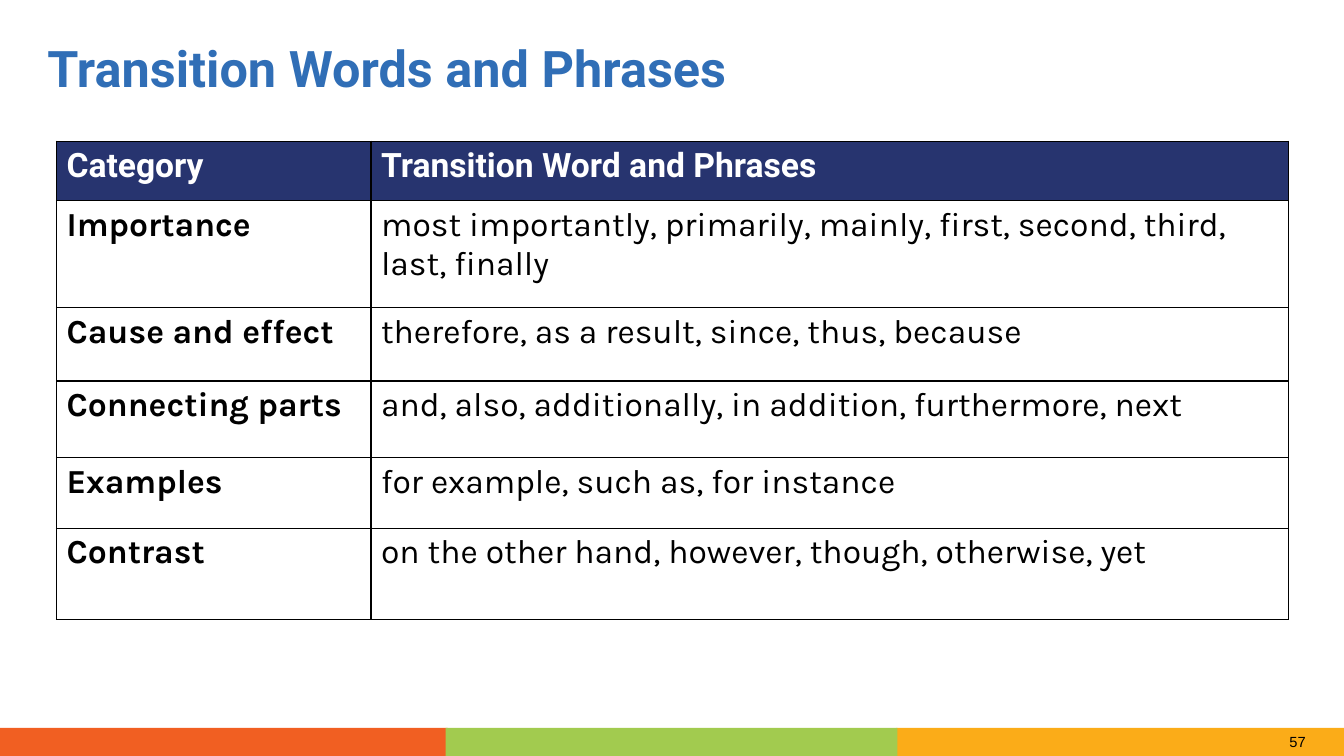
import pptx
import pptx.dml.color
import pptx.enum.shapes
import pptx.enum.text
import pptx.oxml
import pptx.oxml.ns
import pptx.util
from pptx.util import Inches

TITLE_ONLY = 5
MIDDLE = pptx.enum.text.MSO_ANCHOR.MIDDLE
TOP = pptx.enum.text.MSO_ANCHOR.TOP

HEADER = ("Category", "Transition Word and Phrases")
TRANSITIONS = [
    ("Importance", "most importantly, primarily, mainly, first, second, third, last, finally"),
    ("Cause and effect", "therefore, as a result, since, thus, because"),
    ("Connecting parts", "and, also, additionally, in addition, furthermore, next"),
    ("Examples", "for example, such as, for instance"),
    ("Contrast", "on the other hand, however, though, otherwise, yet"),
]
COLUMN_WIDTHS = (3.12, 9.1)
ROW_HEIGHTS = (0.59, 1.06, 0.73, 0.76, 0.7, 0.91)


def color(hex_string):
    return pptx.dml.color.RGBColor.from_string(hex_string)


def write(frame, text, size=24, font="Karla", fill="000000", bold=False,
          anchor=TOP, spacing=None):
    frame.word_wrap = True
    frame.vertical_anchor = anchor
    paragraph = frame.paragraphs[0]
    paragraph.alignment = pptx.enum.text.PP_ALIGN.LEFT
    if spacing:
        paragraph.line_spacing = spacing
    run = paragraph.add_run()
    run.text = text
    run.font.size = pptx.util.Pt(size)
    run.font.name = font
    run.font.bold = bold
    run.font.color.rgb = color(fill)


class SlideBuilder:
    heading_font = "Roboto"
    title_color = "306EB6"
    header_fill = "27346F"
    border_color = "000000"
    border_width = pptx.util.Pt(1)

    def __init__(self, presentation):
        self.slide = presentation.slides.add_slide(presentation.slide_layouts[TITLE_ONLY])

    def title(self, text, left, top, width, height):
        shape = self.slide.shapes.title
        shape.left, shape.top = Inches(left), Inches(top)
        shape.width, shape.height = Inches(width), Inches(height)
        frame = shape.text_frame
        frame.auto_size = pptx.enum.text.MSO_AUTO_SIZE.NONE
        frame.margin_left = frame.margin_right = 0
        frame.margin_top = frame.margin_bottom = 0
        write(frame, text, size=36, font=self.heading_font, fill=self.title_color,
              bold=True, anchor=MIDDLE, spacing=0.9)

    def bar(self, fill, left, top, width, height):
        shape = self.slide.shapes.add_shape(
            pptx.enum.shapes.MSO_SHAPE.RECTANGLE,
            Inches(left), Inches(top), Inches(width), Inches(height))
        shape.shadow.inherit = False
        shape.fill.solid()
        shape.fill.fore_color.rgb = color(fill)
        shape.line.fill.background()

    def label(self, text, left, top, width, height, **style):
        box = self.slide.shapes.add_textbox(
            Inches(left), Inches(top), Inches(width), Inches(height))
        write(box.text_frame, text, **style)

    def border(self, cell):
        properties = cell._tc.get_or_add_tcPr()
        for side in ("lnL", "lnR", "lnT", "lnB"):
            properties.append(pptx.oxml.parse_xml(
                f'<a:{side} {pptx.oxml.ns.nsdecls("a")} w="{self.border_width}">'
                f'<a:solidFill><a:srgbClr val="{self.border_color}"/></a:solidFill>'
                f'</a:{side}>'))

    def table(self, rows, left, top, widths, heights):
        table = self.slide.shapes.add_table(
            len(rows), len(widths), Inches(left), Inches(top),
            Inches(sum(widths)), Inches(sum(heights))).table
        table.first_row = table.horz_banding = False
        for column, width in zip(table.columns, widths):
            column.width = Inches(width)
        for row, height in zip(table.rows, heights):
            row.height = Inches(height)
        for row_index, texts in enumerate(rows):
            for column_index, text in enumerate(texts):
                cell = table.cell(row_index, column_index)
                self.border(cell)
                if row_index == 0:
                    cell.fill.solid()
                    cell.fill.fore_color.rgb = color(self.header_fill)
                    write(cell.text_frame, text, font=self.heading_font,
                          fill="FFFFFF", bold=True)
                else:
                    cell.fill.background()
                    write(cell.text_frame, text, bold=column_index == 0)


def main():
    presentation = pptx.Presentation()
    presentation.slide_width = Inches(13.33)
    presentation.slide_height = Inches(7.5)
    builder = SlideBuilder(presentation)

    # Footer band and page number
    for fill, left, width in (("FBAC18", 8.89, 4.44), ("F15F22", 0, 4.44),
                              ("A2CB4F", 4.42, 4.48)):
        builder.bar(fill, left, 7.22, width, 0.28)
    builder.label("57", 12.69, 7.22, 0.38, 0.28, size=10.5, font="Arial", anchor=MIDDLE)

    # Title
    builder.title("Transition Words and Phrases", 0.47, 0.15, 12.4, 1.11)

    # Transition table
    builder.table([HEADER, *TRANSITIONS], 0.56, 1.4, COLUMN_WIDTHS, ROW_HEIGHTS)

    presentation.save("out.pptx")


if __name__ == "__main__":
    main()
